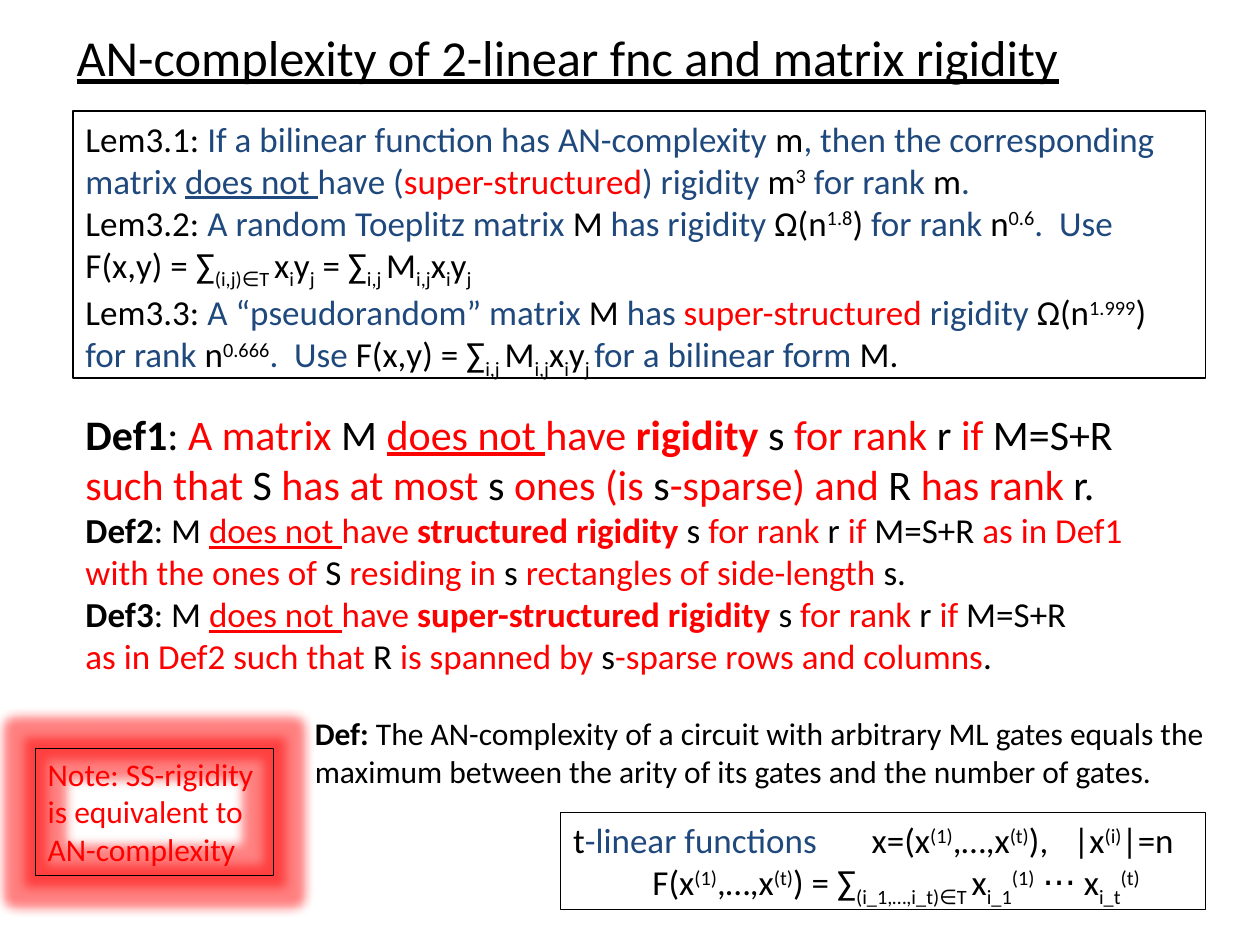
from lxml import etree
from pptx import Presentation
from pptx.dml.color import RGBColor
from pptx.enum import shapes, text
from pptx.oxml import ns
from pptx.util import Inches, Pt

FONT = "Calibri"
COLORS = {"black": "000000", "blue": "1F497D", "red": "FF0000"}

# Inline marks: a colour mark holds until the next one, a style mark toggles.
COLOR_MARKS = {"#": "black", "~": "blue", "$": "red"}
STYLE_MARKS = {"*": "bold", "@": "underline", "^": "super", "`": "sub"}
BASELINES = {"super": "30000", "sub": "-25000"}

TITLE = "@AN-complexity of 2-linear fnc and matrix rigidity"

LEMMAS = [
    "Lem3.1:~ If a bilinear function has AN-complexity #m~, then the corresponding "
    "matrix @does not @have ($super-structured~) rigidity #m^3^~ for rank #m~.",
    "Lem3.2:~ A random Toeplitz matrix #M~ has rigidity #Ω(n^1.8^) ~for rank #n^0.6^~.  Use "
    "#F(x,y) = ∑`(i,j)∈T `x`i`y`j` = ∑`i,j `M`i,j`x`i`y`j`",
    "Lem3.3: ~A “pseudorandom” matrix #M ~has $super-structured ~rigidity #Ω(n^1.999^) "
    "~for rank #n^0.666^~.  Use #F(x,y) = ∑`i,j `M`i,j`x`i`y`j `~for a bilinear form #M.",
]

RIGIDITY = "$@does not @have *{}rigidity *#s$ for rank #r $if# M=S+R"
DEF1 = ("*Def1*: $A matrix #M " + RIGIDITY.format("") + " $such that #S $has at most #s "
        "$ones (is #s$-sparse) and #R $has rank #r.")
DEF2 = ("*Def2*: M " + RIGIDITY.format("structured ") + " $as in Def1\n"
        "with the ones of #S $residing in #s $rectangles of side-length #s.")
DEF3 = ("*Def3*: M " + RIGIDITY.format("super-structured ") + "\n"
        "$as in Def2 such that #R $is spanned by #s$-sparse rows and columns#.")

AN_COMPLEXITY = ("*Def:* The AN-complexity of a circuit with arbitrary ML gates equals the "
                 "maximum between the arity of its gates and the number of gates.")

T_LINEAR = [
    "t~-linear functions\t#x=(x^(1)^,…,x^(t)^),\t|x^(i)^|=n",
    "F(x^(1)^,…,x^(t)^) = ∑`(i_1,…,i_t)∈T `x`i_1`^(1)^ ⋅⋅⋅ x`i_t`^(t)^",
]

NOTE = "$Note: SS-rigidity is equivalent to AN-complexity"


def parse_marks(marked):
    """Yield (words, colour, styles) for each stretch of marked text."""
    words, color, styles = "", "black", frozenset()
    for char in marked:
        if char not in COLOR_MARKS and char not in STYLE_MARKS:
            words += char
            continue
        if words:
            yield words, color, styles
            words = ""
        if char in COLOR_MARKS:
            color = COLOR_MARKS[char]
        else:
            styles = styles ^ {STYLE_MARKS[char]}
    if words:
        yield words, color, styles


def add_run(paragraph, words, color, styles, size):
    run = paragraph.add_run()
    run.text = words
    font = run.font
    font.name, font.size = FONT, Pt(size)
    font.color.rgb = RGBColor.from_string(COLORS[color])
    if "bold" in styles:
        font.bold = True
    if "underline" in styles:
        font.underline = True
    for style in styles & BASELINES.keys():
        font._element.set("baseline", BASELINES[style])


def write(paragraph, marked, size):
    paragraph.alignment = text.PP_ALIGN.LEFT
    paragraph.font.name, paragraph.font.size = FONT, Pt(size)
    for words, color, styles in parse_marks(marked):
        for i, line in enumerate(words.split("\n")):
            if i:
                paragraph.add_line_break()
            if line:
                add_run(paragraph, line, color, styles, size)


def fill_frame(shape, paragraphs, sizes):
    frame = shape.text_frame
    frame.word_wrap = True
    frame.auto_size = text.MSO_AUTO_SIZE.SHAPE_TO_FIT_TEXT
    frame.vertical_anchor = text.MSO_ANCHOR.TOP
    for i, (marked, size) in enumerate(zip(paragraphs, sizes)):
        write(frame.add_paragraph() if i else frame.paragraphs[0], marked, size)
    return shape


def add_text(slide, box, paragraphs, sizes):
    return fill_frame(slide.shapes.add_textbox(*map(Inches, box)), paragraphs, sizes)


def add_framed_text(slide, box, paragraphs, size):
    frame = slide.shapes.add_shape(shapes.MSO_SHAPE.RECTANGLE, *map(Inches, box))
    frame.shadow.inherit = False
    frame.fill.background()
    frame.line.color.rgb = RGBColor.from_string(COLORS["black"])
    frame.line.width = Pt(0.75)
    return fill_frame(frame, paragraphs, [size] * len(paragraphs))


def set_tab_stops(paragraph, stops):
    tabs = etree.Element(ns.qn("a:tabLst"))
    for stop in stops:
        etree.SubElement(tabs, ns.qn("a:tab"), pos=str(Inches(stop)), algn="l")
    properties = paragraph._p.get_or_add_pPr()
    properties.insert(0, tabs)


def set_indent(paragraph, indent):
    properties = paragraph._p.get_or_add_pPr()
    properties.set("marL", str(Inches(indent)))
    properties.set("indent", "0")


def add_glow(shape, color, radius, opacity):
    effects = shape._element.spPr.find(ns.qn("a:effectLst"))
    glow = etree.SubElement(effects, ns.qn("a:glow"), rad=str(Inches(radius)))
    tint = etree.SubElement(glow, ns.qn("a:srgbClr"), val=COLORS[color])
    etree.SubElement(tint, ns.qn("a:alpha"), val=str(opacity * 1000))


def main():
    deck = Presentation()
    deck.slide_width, deck.slide_height = Inches(10), Inches(7.5)
    slide = deck.slides.add_slide(deck.slide_layouts[6])

    title = add_text(slide, (0.51, 0.2, 8.5, 0.5), [TITLE], [28.8])
    title.text_frame.auto_size = text.MSO_AUTO_SIZE.NONE
    title.text_frame.vertical_anchor = text.MSO_ANCHOR.MIDDLE

    add_text(slide, (2.4, 5.62, 7.36, 0.71), [AN_COMPLEXITY], [18])

    t_linear = add_framed_text(slide, (4.45, 6.45, 5.12, 0.77), T_LINEAR, 20)
    functions, formula = t_linear.text_frame.paragraphs
    set_tab_stops(functions, [2.37, 3.97])
    set_indent(formula, 0.63)

    add_framed_text(slide, (0.58, 0.88, 8.99, 2.12), LEMMAS, 20)
    add_text(slide, (0.58, 3.19, 8.99, 2.26), [DEF1, DEF2, DEF3], [24, 20, 20])

    note = add_framed_text(slide, (0.28, 5.94, 1.89, 1.01), [NOTE], 18)
    add_glow(note, "red", 0.17, 50)

    deck.save("out.pptx")


if __name__ == "__main__":
    main()
